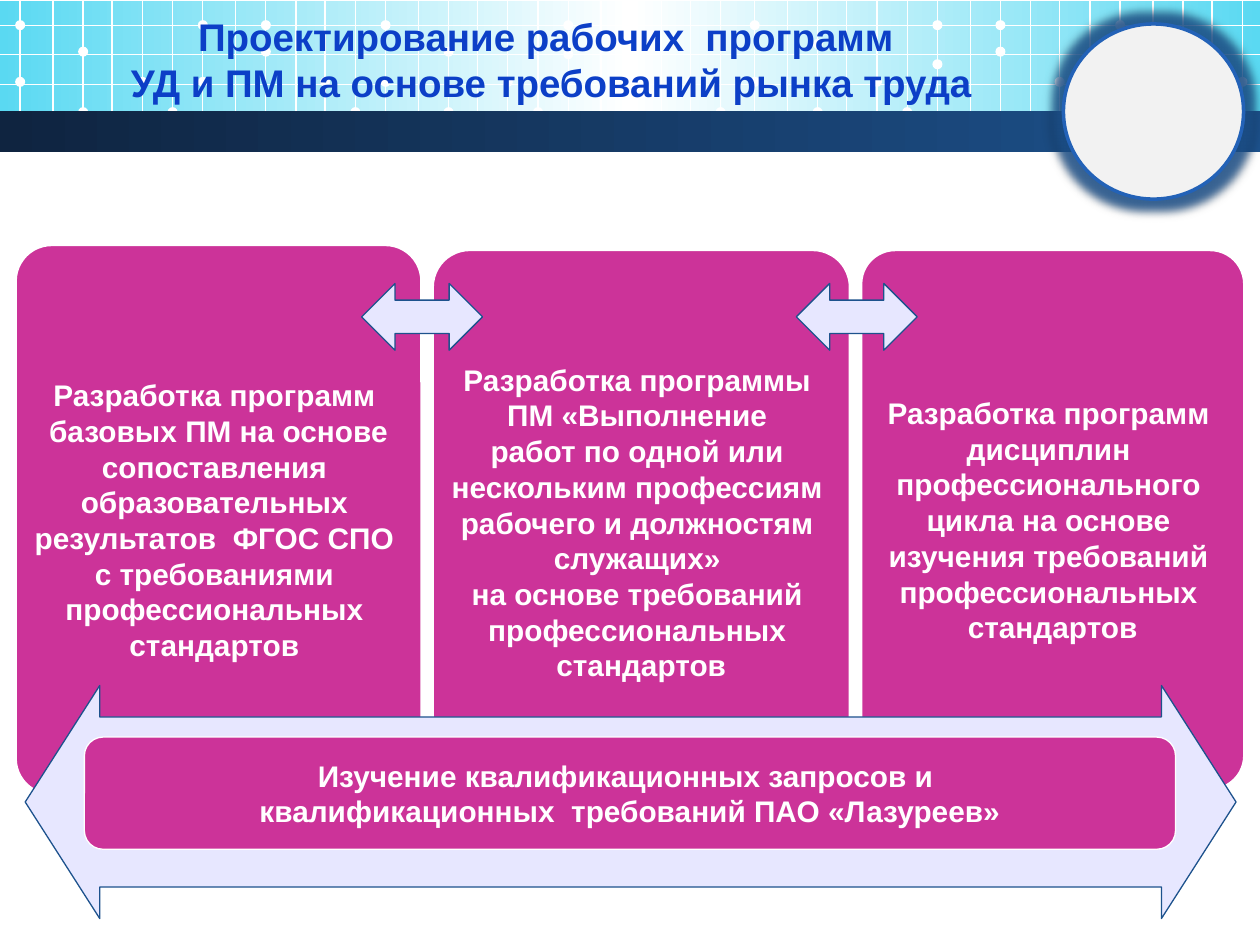
from typing import NamedTuple, Optional

from lxml import etree
from pptx import Presentation
from pptx.dml.color import RGBColor
from pptx.enum.shapes import MSO_CONNECTOR as Connector, MSO_SHAPE as Preset
from pptx.enum.text import MSO_ANCHOR as Anchor, PP_ALIGN as Align
from pptx.oxml import parse_xml
from pptx.oxml.ns import nsdecls, qn
from pptx.util import Inches, Pt

WHITE = RGBColor(0xFF, 0xFF, 0xFF)
CYAN = RGBColor(0x5A, 0xD9, 0xF2)
NIGHT = RGBColor(0x0F, 0x24, 0x40)
NAVY = RGBColor(0x1D, 0x52, 0x8D)
PALE_GREY = RGBColor(0xF2, 0xF2, 0xF2)
RING_BLUE = RGBColor(0x23, 0x62, 0xB7)
TITLE_BLUE = RGBColor(0x0C, 0x3F, 0xC7)
MAGENTA = RGBColor(0xCC, 0x33, 0x99)
LAVENDER = RGBColor(0xE7, 0xE7, 0xFF)
FONT = "Arial"


class Area(NamedTuple):
    left: float
    top: float
    width: float
    height: float


class Card(NamedTuple):
    area: Area
    lines: list[str]


CARDS = [
    Card(Area(0.12, 1.94, 3.23, 4.37), [
        "Разработка программ ", "базовых ПМ на основе", "сопоставления ",
        "образовательных ", "результатов  ФГОС СПО ", "с требованиями ",
        "профессиональных ", "стандартов "]),
    Card(Area(3.43, 1.98, 3.32, 4.33), [
        "Разработка программы ", "ПМ «Выполнение ", "работ по одной или ",
        "нескольким профессиям ", "рабочего и должностям ", "служащих» ",
        "на основе требований ", "профессиональных ", "стандартов"]),
    Card(Area(6.83, 1.98, 3.05, 4.29), [
        "Разработка программ ", "дисциплин ", "профессионального ",
        "цикла на основе ", "изучения требований ", "профессиональных ",
        "стандартов"]),
]
SUMMARY = ["Изучение квалификационных запросов и ",
           "квалификационных  требований ПАО «Лазуреев»"]

# Header grid: the same run of columns starts again at each module
MODULES = [0.16, 3.06, 5.99, 8.89]
COLUMNS = [0, 0.26, 0.5, 0.73, 0.97, 1.21, 1.45, 1.71, 1.95, 2.19, 2.42, 2.66]
ROWS = [0.2, 0.43, 0.67, 0.89]
DOT = 0.08
DOT_TOPS = {0: [0.61, 0.16], 2: [0.37, 0.85], 4: [0.61], 5: [0.85],
            6: [0.61, 0.16], 8: [0.37, 0.16], 10: [0.61], 11: [0.85]}
MOVED_DOTS = {(1, 6): [0.39, 0.16], (2, 2): [0.31, 0.85], (2, 6): [0.47, 0.16]}


def add_preset(page, preset, area: Area, fill: Optional[RGBColor],
               line: Optional[RGBColor] = None, weight: float = 0.75,
               adjustments: tuple = ()):
    shape = page.shapes.add_shape(preset, *map(Inches, area))
    shape.shadow.inherit = False
    if fill is not None:
        shape.fill.solid()
        shape.fill.fore_color.rgb = fill
    if line is None:
        shape.line.fill.background()
    else:
        shape.line.color.rgb = line
        shape.line.width = Pt(weight)
    for index, value in enumerate(adjustments):
        shape.adjustments[index] = value
    return shape


def add_band(page, area: Area, colors: list[RGBColor]) -> None:
    """Rectangle with evenly spaced gradient stops from left to right."""
    band = add_preset(page, Preset.RECTANGLE, area, None)
    step = 100000 // (len(colors) - 1)
    stops = "".join(f'<a:gs pos="{index * step}"><a:srgbClr val="{color}"/></a:gs>'
                    for index, color in enumerate(colors))
    gradient = parse_xml(f'<a:gradFill {nsdecls("a")}><a:gsLst>{stops}</a:gsLst>'
                         '<a:lin ang="0" scaled="0"/></a:gradFill>')
    band.element.spPr.find(qn("a:prstGeom")).addnext(gradient)


def add_grid_line(page, x1: float, y1: float, x2: float, y2: float) -> None:
    line = page.shapes.add_connector(Connector.STRAIGHT, *map(Inches, (x1, y1, x2, y2)))
    line.line.color.rgb = WHITE
    line.line.width = Pt(0.75)
    etree.SubElement(line.element.spPr, qn("a:effectLst"))


def write_text(shape, lines: list[str], size: float, color: RGBColor,
               wrap: bool = True) -> None:
    frame = shape.text_frame
    frame.word_wrap = wrap
    frame.vertical_anchor = Anchor.MIDDLE
    frame.text = "\n".join(lines)
    for para in frame.paragraphs:
        para.alignment = Align.CENTER
        for span in para.runs:
            span.font.name = FONT
            span.font.size = Pt(size)
            span.font.bold = True
            span.font.color.rgb = color


def add_header(page) -> None:
    add_band(page, Area(0, 0.01, 10, 1.02), [CYAN, WHITE, CYAN])
    for module, start in enumerate(MODULES):
        for column, offset in enumerate(COLUMNS):
            x = start + offset
            if x > 9.9:
                break
            add_grid_line(page, x, 0, x, 1.1)
            for top in MOVED_DOTS.get((module, column), DOT_TOPS.get(column, [])):
                add_preset(page, Preset.OVAL, Area(x - DOT / 2, top, DOT, DOT), WHITE)
    for y in ROWS:
        add_grid_line(page, 0, y, 10, y)
    add_band(page, Area(0, 0.88, 10, 0.33), [NIGHT, NAVY])

    # Round emblem space with a soft halo
    circle = add_preset(page, Preset.OVAL, Area(8.44, 0.19, 1.43, 1.39),
                        PALE_GREY, RING_BLUE, 2)
    effects = circle.element.spPr.find(qn("a:effectLst"))
    glow = etree.SubElement(effects, qn("a:glow"), rad=str(Pt(10)))
    color = etree.SubElement(glow, qn("a:srgbClr"), val=str(NAVY))
    etree.SubElement(color, qn("a:alpha"), val="80000")
    shadow = etree.SubElement(effects, qn("a:outerShdw"), blurRad=str(Pt(5)), dist="0")
    color = etree.SubElement(shadow, qn("a:srgbClr"), val="000000")
    etree.SubElement(color, qn("a:alpha"), val="40000")


def main() -> None:
    deck = Presentation()
    deck.slide_width, deck.slide_height = Inches(10), Inches(7.5)
    page = deck.slides.add_slide(deck.slide_layouts[6])

    add_header(page)

    # Three programme cards
    for card in CARDS:
        box = add_preset(page, Preset.ROUNDED_RECTANGLE, card.area, MAGENTA,
                         WHITE, 2, (0.09,))
        write_text(box, card.lines, 17, WHITE, wrap=False)

    # Title
    title = page.shapes.add_textbox(*map(Inches, (0.28, 0.1, 8.19, 0.74)))
    write_text(title, ["Проектирование рабочих  программ \v"
                       "УД и ПМ на основе требований рынка труда"], 22, TITLE_BLUE)

    # Arrows between the cards and the wide arrow beneath them
    for left in (2.87, 6.32):
        add_preset(page, Preset.LEFT_RIGHT_ARROW, Area(left, 2.25, 0.96, 0.53),
                   LAVENDER, NAVY)
    add_preset(page, Preset.LEFT_RIGHT_ARROW, Area(0.2, 5.44, 9.61, 1.85),
               LAVENDER, NAVY, adjustments=(0.73, 0.32))
    summary = add_preset(page, Preset.ROUNDED_RECTANGLE, Area(0.67, 5.85, 8.66, 0.89),
                         MAGENTA, WHITE)
    write_text(summary, SUMMARY, 17, WHITE)

    deck.save("out.pptx")


if __name__ == "__main__":
    main()
